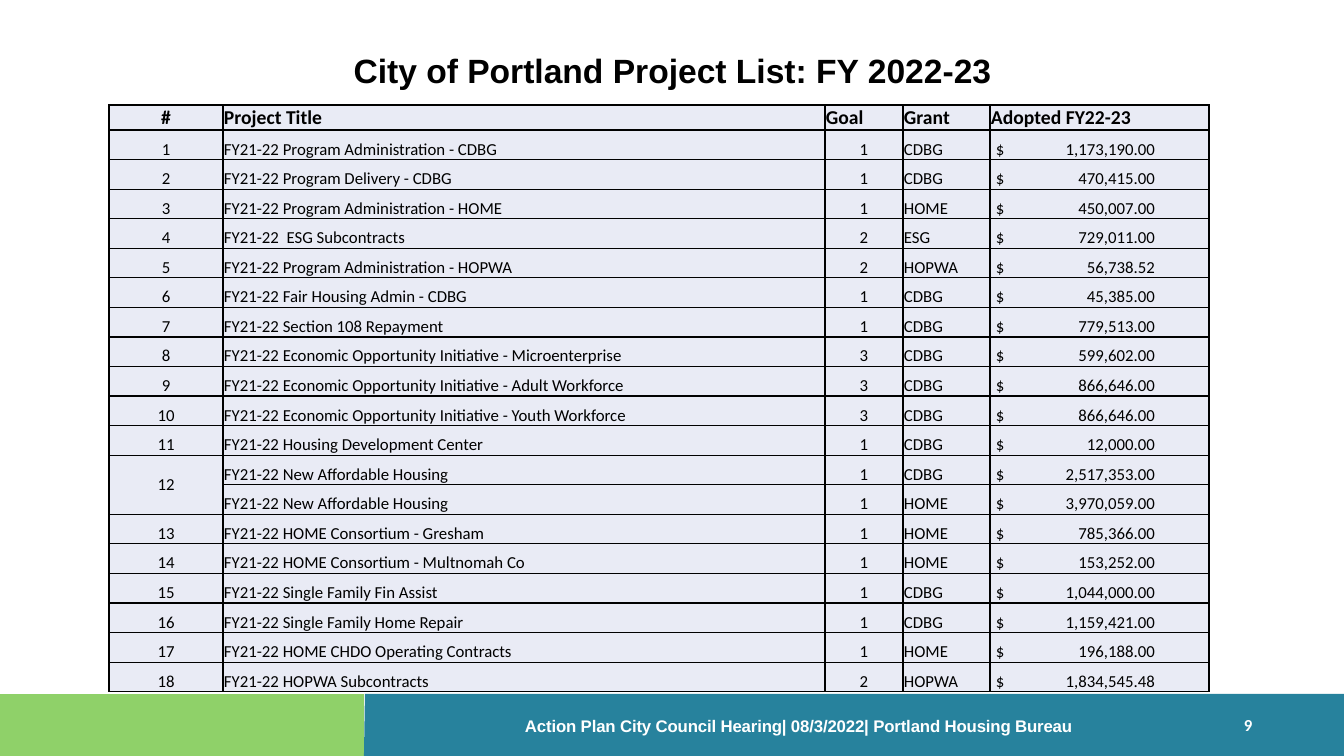
from dataclasses import dataclass

from pptx import Presentation
from pptx import util as u
from pptx.dml.color import RGBColor
from pptx.enum import text
from pptx.oxml import parse_xml
from pptx.oxml.ns import nsdecls, qn

EMU_PER_PX = 914400 / 100.8
SLIDE_W, SLIDE_H = 1344, 756
TITLE_ONLY = 5


@dataclass(frozen=True)
class Theme:
    black: str = "000000"
    white: str = "FFFFFF"
    green: str = "8FD169"
    blue: str = "27829D"
    cell: str = "E9EBF5"
    heading_font: str = "Arial"
    body_font: str = "Calibri"
    title_pt: int = 24
    header_pt: int = 14
    body_pt: int = 12
    border_pt: int = 1


@dataclass(frozen=True)
class Box:
    x: int
    y: int
    w: int
    h: int


@dataclass(frozen=True)
class Style:
    font: str
    size: int
    color: str
    bold: bool = False


@dataclass(frozen=True)
class Band:
    color: str
    points: tuple[tuple[int, int], ...]


@dataclass(frozen=True)
class Column:
    label: str
    width: int
    centered: bool = False
    inset: int = 1


@dataclass(frozen=True)
class Project:
    number: str
    title: str
    goal: int
    grant: str
    adopted: str

    def cells(self) -> tuple[str, ...]:
        return (self.number, f"FY21-22 {self.title}", str(self.goal), self.grant, f"$\t{self.adopted}")


THEME = Theme()
TITLE = Style(THEME.heading_font, THEME.title_pt, THEME.black, True)
HEADER = Style(THEME.body_font, THEME.header_pt, THEME.black, True)
BODY = Style(THEME.body_font, THEME.body_pt, THEME.black)
FOOTER = Style(THEME.heading_font, THEME.body_pt, THEME.white, True)
PAGE = Style(THEME.body_font, THEME.body_pt, THEME.white, True)

BANDS = (
    Band(THEME.green, ((0, 756), (364, 756), (364, 694), (0, 694))),
    Band(THEME.blue, ((1344, 694), (365, 694), (364, 756), (1344, 756))),
)

TABLE = Box(109, 105, 1100, 587)
HEADER_H = 25
AMOUNT_TAB = 159
COLUMNS = (
    Column("#", 114, centered=True),
    Column("Project Title", 602),
    Column("Goal", 78, centered=True),
    Column("Grant", 87),
    Column("Adopted FY22-23", 219, inset=6),
)
# An empty number continues the project above it.
PROJECTS = (
    Project("1", "Program Administration - CDBG", 1, "CDBG", "1,173,190.00"),
    Project("2", "Program Delivery - CDBG", 1, "CDBG", "470,415.00"),
    Project("3", "Program Administration - HOME", 1, "HOME", "450,007.00"),
    Project("4", " ESG Subcontracts", 2, "ESG", "729,011.00"),
    Project("5", "Program Administration - HOPWA", 2, "HOPWA", "56,738.52"),
    Project("6", "Fair Housing Admin - CDBG", 1, "CDBG", "45,385.00"),
    Project("7", "Section 108 Repayment", 1, "CDBG", "779,513.00"),
    Project("8", "Economic Opportunity Initiative - Microenterprise", 3, "CDBG", "599,602.00"),
    Project("9", "Economic Opportunity Initiative - Adult Workforce", 3, "CDBG", "866,646.00"),
    Project("10", "Economic Opportunity Initiative - Youth Workforce", 3, "CDBG", "866,646.00"),
    Project("11", "Housing Development Center", 1, "CDBG", "12,000.00"),
    Project("12", "New Affordable Housing", 1, "CDBG", "2,517,353.00"),
    Project("", "New Affordable Housing", 1, "HOME", "3,970,059.00"),
    Project("13", "HOME Consortium - Gresham", 1, "HOME", "785,366.00"),
    Project("14", "HOME Consortium - Multnomah Co", 1, "HOME", "153,252.00"),
    Project("15", "Single Family Fin Assist", 1, "CDBG", "1,044,000.00"),
    Project("16", "Single Family Home Repair", 1, "CDBG", "1,159,421.00"),
    Project("17", "HOME CHDO Operating Contracts", 1, "HOME", "196,188.00"),
    Project("18", "HOPWA Subcontracts", 2, "HOPWA", "1,834,545.48"),
)


def px(n: float) -> u.Emu:
    return u.Emu(round(n * EMU_PER_PX))


def place(box: Box) -> tuple[u.Emu, ...]:
    return px(box.x), px(box.y), px(box.w), px(box.h)


def add_run(p, words: str, style: Style):
    r = p.add_run()
    r.text = words
    r.font.name, r.font.size, r.font.bold = style.font, u.Pt(style.size), style.bold
    r.font.color.rgb = RGBColor.from_string(style.color)
    return r


def add_title(s, words: str, box: Box) -> None:
    sp = s.shapes.title
    sp.left, sp.top, sp.width, sp.height = place(box)
    tf = sp.text_frame
    tf.auto_size = text.MSO_AUTO_SIZE.NONE
    tf.vertical_anchor = text.MSO_ANCHOR.MIDDLE
    p = tf.paragraphs[0]
    p.alignment, p.line_spacing = text.PP_ALIGN.CENTER, 0.9
    add_run(p, words, TITLE)


def add_band(s, band: Band) -> None:
    builder = s.shapes.build_freeform(*band.points[0], scale=EMU_PER_PX)
    builder.add_line_segments(band.points[1:], close=True)
    sp = builder.convert_to_shape()
    sp.shadow.inherit = False
    sp.fill.solid()
    sp.fill.fore_color.rgb = RGBColor.from_string(band.color)
    sp.line.fill.background()


def add_label(s, words: str, box: Box, style: Style):
    """Add a one-line text box without insets; return its paragraph and run."""
    tf = s.shapes.add_textbox(*place(box)).text_frame
    tf.word_wrap = True
    tf.margin_left = tf.margin_top = tf.margin_right = tf.margin_bottom = 0
    p = tf.paragraphs[0]
    return p, add_run(p, words, style)


def format_cell(cell, column: Column) -> None:
    """Set the fill, insets and four borders of a table cell."""
    cell.fill.solid()
    cell.fill.fore_color.rgb = RGBColor.from_string(THEME.cell)
    cell.vertical_anchor = text.MSO_ANCHOR.BOTTOM
    cell.margin_left, cell.margin_top, cell.margin_right, cell.margin_bottom = px(column.inset), px(1), px(1), 0
    tc_pr = cell._tc.get_or_add_tcPr()
    for i, side in enumerate("LRTB"):
        tc_pr.insert(i, parse_xml(
            f'<a:ln{side} {nsdecls("a")} w="{u.Pt(THEME.border_pt)}"><a:solidFill>'
            f'<a:srgbClr val="{THEME.black}"/></a:solidFill></a:ln{side}>'))


def add_tab_stop(p, position: int) -> None:
    p._p.get_or_add_pPr().append(parse_xml(
        f'<a:tabLst {nsdecls("a")}><a:tab pos="{px(position)}" algn="r"/></a:tabLst>'))


def add_project_table(s) -> None:
    table = s.shapes.add_table(len(PROJECTS) + 1, len(COLUMNS), *place(TABLE)).table
    table.first_row = table.horz_banding = False
    for i, row in enumerate(table.rows):
        row.height = px((TABLE.h - HEADER_H) / len(PROJECTS)) if i else px(HEADER_H)
    rows = [tuple(c.label for c in COLUMNS), *(project.cells() for project in PROJECTS)]
    for j, column in enumerate(COLUMNS):
        table.columns[j].width = px(column.width)
        for i, row in enumerate(rows):
            cell = table.cell(i, j)
            format_cell(cell, column if i else Column(column.label, column.width))
            p = cell.text_frame.paragraphs[0]
            if column.centered and (i or j == 0):
                p.alignment = text.PP_ALIGN.CENTER
            if "\t" in row[j]:
                add_tab_stop(p, AMOUNT_TAB)
            if row[j]:
                add_run(p, row[j], BODY if i else HEADER)
            else:
                first = table.cell(i - 1, j)
                first.merge(cell)
                first.vertical_anchor = text.MSO_ANCHOR.MIDDLE


def main() -> None:
    prs = Presentation()
    prs.slide_width, prs.slide_height = px(SLIDE_W), px(SLIDE_H)
    s = prs.slides.add_slide(prs.slide_layouts[TITLE_ONLY])
    add_title(s, "City of Portland Project List: FY 2022-23", Box(93, 40, 1159, 65))
    for band in BANDS:
        add_band(s, band)
    p, r = add_label(s, "Action Plan City Council Hearing| 08/3/2022| Portland Housing Bureau", Box(525, 716, 672, 20), FOOTER)
    p.line_spacing = u.Pt(14.2)
    r.font._element.set("spc", "-10")
    add_project_table(s)
    add_label(s, "9", Box(1244, 715, 20, 21), PAGE)
    prs.save("out.pptx")


if __name__ == "__main__":
    main()
